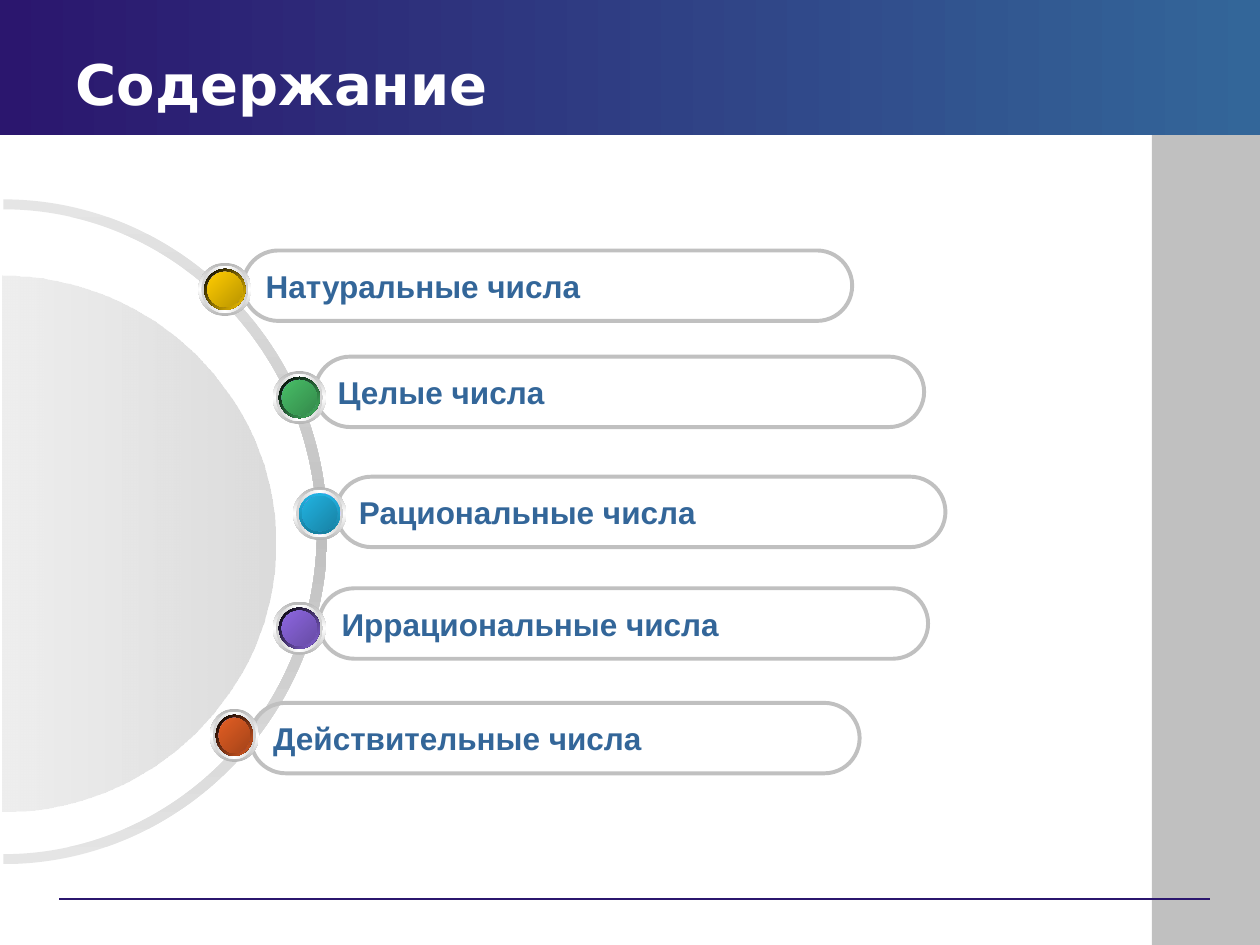
from dataclasses import dataclass

from lxml.etree import SubElement
from pptx import Presentation
from pptx.dml.color import RGBColor
from pptx.enum.shapes import MSO_CONNECTOR, MSO_SHAPE
from pptx.enum.text import MSO_ANCHOR, MSO_AUTO_SIZE, PP_ALIGN
from pptx.oxml.ns import qn
from pptx.util import Cm, Pt

NAVY, BLUE, GREY, WHITE = "2B166E", "336699", "C0C0C0", "FFFFFF"
BLACK, LILAC = "000000", "9999FF"
PILL_W, PILL_H = 12.28, 1.42
DOT, STEP = 1.07, 0.06  # dot height, inset of each inner layer
BEND = 0.55  # handle length of a quarter ellipse


@dataclass
class Stop:
    code: str
    shade: float = 0
    alpha: float = 0


@dataclass
class Item:
    text: str
    pill: tuple[float, float]
    dot: tuple[float, float]
    hue: str
    wide: float = DOT


ITEMS = [
    Item("Натуральные числа", (4.9, 5.05), (4, 5.3), "FFCC00"),
    Item("Целые числа", (6.35, 7.19), (5.5, 7.48), "48BE67"),
    Item("Рациональные числа", (6.78, 9.61), (5.91, 9.82), "21B3E1"),
    Item("Иррациональные числа", (6.43, 11.86), (5.5, 12.13), "8D67E1"),
    Item("Действительные числа", (5.05, 14.17), (4.23, 14.29), "E35E23", 0.99),
]


def color(code: str) -> RGBColor:
    return RGBColor.from_string(code)


def blend(shape, stops: list[Stop], angle: int) -> None:
    """Fill with evenly spaced gradient stops, clockwise angle in degrees."""
    shape.fill.gradient()
    grad = shape._element.spPr.find(qn("a:gradFill"))
    for part in list(grad):
        grad.remove(part)
    rows = SubElement(grad, qn("a:gsLst"))
    for i, stop in enumerate(stops):
        pos = 100000 * i // (len(stops) - 1)
        row = SubElement(rows, qn("a:gs"), pos=str(pos))
        tint = SubElement(row, qn("a:srgbClr"), val=stop.code)
        for key in ("shade", "alpha"):
            value = getattr(stop, key)
            if value:
                SubElement(tint, qn("a:" + key), val=str(round(value * 1000)))
    SubElement(grad, qn("a:lin"), ang=str(angle * 60000), scaled="0")


def add(shapes, kind, x: float, y: float, w: float, h: float):
    shape = shapes.add_shape(kind, Cm(x), Cm(y), Cm(w), Cm(h))
    shape.shadow.inherit = False
    shape.line.fill.background()
    return shape


def write(shape, text: str, **style) -> None:
    frame = shape.text_frame
    frame.text = text
    frame.auto_size = MSO_AUTO_SIZE.NONE
    frame.vertical_anchor = MSO_ANCHOR.MIDDLE
    para = frame.paragraphs[0]
    para.alignment = PP_ALIGN.LEFT
    font = para.runs[0].font
    font.color.rgb = color(style.pop("ink"))
    for key, value in style.items():
        setattr(font, key, value)


def half(x: float, y: float, rx: float, ry: float) -> list[tuple[int, int]]:
    """Top, right and bottom of a right half ellipse."""
    return [(Cm(x), Cm(y - ry)), (Cm(x + rx), Cm(y)), (Cm(x), Cm(y + ry))]


def outline(shapes, points: list[tuple[int, int]]):
    """Closed shape of half ellipses, three points each."""
    pen = shapes.build_freeform(*points[0], scale=1.0)
    pen.add_line_segments(points[1:], close=True)
    shape = pen.convert_to_shape()
    shape.shadow.inherit = False
    shape.line.fill.background()

    lines = list(shape._element.iter(qn("a:lnTo")))
    for i, line in enumerate(lines[:len(points) - 1], 1):
        if i % 3 == 0:
            continue  # straight edge between two halves
        (ax, ay), (bx, by) = points[i - 1], points[i]
        dx, dy = BEND * (bx - ax), BEND * (by - ay)
        if i % 3 == 1:
            marks = [(ax + dx, ay), (bx, by - dy), (bx, by)]
        else:
            marks = [(ax, ay + dy), (bx - dx, by), (bx, by)]
        line.tag = qn("a:cubicBezTo")
        line.remove(line[0])
        for px, py in marks:
            SubElement(line, qn("a:pt"), x=str(round(px - shape.left)),
                       y=str(round(py - shape.top)))
    return shape


def draw_pill(shapes, item: Item) -> None:
    pill = add(shapes, MSO_SHAPE.ROUNDED_RECTANGLE, *item.pill, PILL_W, PILL_H)
    pill.adjustments[0] = 0.5
    pill.fill.background()
    pill.line.color.rgb = color(GREY)
    pill.line.width = Pt(2.25)
    write(pill, item.text, ink=BLUE, size=Pt(18), bold=True, name="Arial")
    pill.text_frame.word_wrap = False


def draw_dot(shapes, item: Item) -> None:
    rim, ring, deep = Stop(WHITE, 46.27), Stop(WHITE, 63.53), Stop(LILAC, 54.5)
    white, lilac, hue = Stop(WHITE), Stop(LILAC), Stop(item.hue)
    edge, turn = [Stop(BLACK), hue], 45
    if item.hue == "21B3E1":
        edge, turn = [hue, Stop(item.hue, 46.27)], 90
    layers = [
        (0, [rim, white, rim], 90),
        (1, [ring, white, ring], 0),
        (2, [white, lilac, white], 45),
        (2, edge, turn),
        (3, [deep, lilac, deep], 315),
        (3, [hue, Stop(item.hue, 48.6)], 45),
    ]
    group = shapes.add_group_shape()
    x, y = item.dot
    for level, stops, angle in layers:
        gap = level * STEP
        ball = add(group.shapes, MSO_SHAPE.OVAL, x + gap, y + gap,
                   item.wide - 2 * gap, DOT - 2 * gap)
        blend(ball, stops, angle)


def main() -> None:
    deck = Presentation()
    deck.slide_width, deck.slide_height = Cm(25.4), Cm(19.05)
    slide = deck.slides.add_slide(deck.slide_layouts[5])
    shapes = slide.shapes

    # Side bar, bottom rule and header band
    bar = add(shapes, MSO_SHAPE.RECTANGLE, 23.22, 2.72, 2.18, 16.33)
    bar.fill.solid()
    bar.fill.fore_color.rgb = color(GREY)
    rule = shapes.add_connector(MSO_CONNECTOR.STRAIGHT, Cm(1.19), Cm(18.12),
                                Cm(24.39), Cm(18.12))
    rule.line.color.rgb = color(NAVY)
    rule.line.width = Pt(0.75)
    SubElement(rule._element.spPr, qn("a:effectLst"))
    band = add(shapes, MSO_SHAPE.RECTANGLE, 0, 0, 25.4, 2.72)
    blend(band, [Stop(NAVY), Stop(BLUE)], 0)

    # Title, raised above the band
    title = shapes.title
    place = {"left": 1.27, "top": 0.89, "width": 17.14, "height": 1.57}
    for key, value in place.items():
        setattr(title, key, Cm(value))
    write(title, "Содержание", ink=WHITE, size=Pt(32), bold=True, name="DejaVu Sans")
    band._element.addnext(title._element)

    # Half ring and half disc
    ring = half(0.07, 10.72, 6.53, 6.7) + half(0.07, 10.72, 6.32, 6.5)[::-1]
    pale = Stop("E5E5E5")
    blend(outline(shapes, ring), [pale, Stop(GREY), pale], 90)
    disc = outline(shapes, half(0.05, 10.96, 5.51, 5.4))
    blend(disc, [Stop("DFDFDF", alpha=52), Stop(GREY, alpha=56)], 0)

    # Contents list
    for item in reversed(ITEMS):
        draw_pill(shapes, item)
    for item in ITEMS:
        draw_dot(shapes, item)

    deck.save("out.pptx")


if __name__ == "__main__":
    main()
